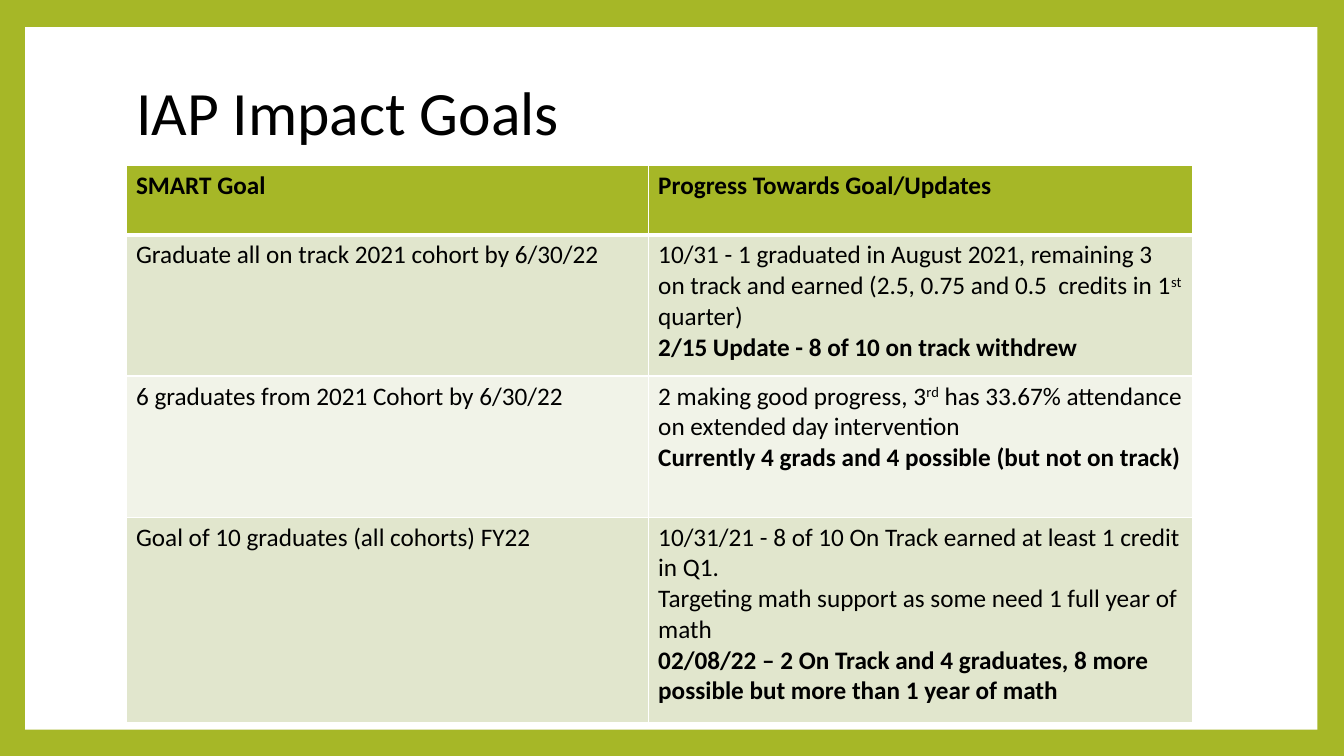
from lxml.etree import SubElement as Sub
from pptx import Presentation
from pptx.dml.color import RGBColor as Rgb
from pptx.enum.shapes import MSO_SHAPE as Kind
from pptx.enum.text import MSO_ANCHOR as Anchor, PP_ALIGN as Align
from pptx.oxml.ns import qn
from pptx.util import Pt

HUES = {"green": "A6B727", "white": "FFFFFF", "black": "000000",
        "sage": "E1E6CD", "pale": "F1F3E8"}
COLS = [373, 388.8]
ROWS = [49.7, 100.8, 100.8, 146.9]
FILLS = ["green", "sage", "pale", "sage"]
GOALS = [
    ([[("SMART Goal", "b")]], [[("Progress Towards Goal/Updates", "b")]]),
    ([[("Graduate all on track 2021 cohort by 6/30/22", "")]],
     [[("10/31 - 1 graduated in August 2021, remaining 3 on track and earned "
        "(2.5, 0.75 and 0.5  credits in 1", ""), ("st ", "s"), ("quarter)", "")],
      [("2/15 Update - 8 of 10 on track withdrew", "b")]]),
    ([[("6 graduates from 2021 Cohort by 6/30/22", "")]],
     [[("2 making good progress, 3", ""), ("rd", "s"),
       (" has 33.67% attendance on extended day intervention", "")],
      [("Currently 4 grads and 4 possible (but not on track)", "b")]]),
    ([[("Goal of 10 graduates (all cohorts) FY22", "")]],
     [[("10/31/21 - 8 of 10 On Track earned at least 1 credit in Q1.", "")],
      [("Targeting math support as some need 1 full year of math", "")],
      [("02/08/22 – 2 On Track and 4 graduates, 8 more possible "
        "but more than 1 year of math", "b")]]),
]


class Deck:
    """Holds the style and the current slide, and draws each kind of element."""

    def __init__(self, font, size):
        self.font, self.size = font, size
        self.prs = Presentation()
        self.prs.slide_width, self.prs.slide_height = Pt(960), Pt(540)
        self.slide = self.prs.slides.add_slide(self.prs.slide_layouts[5])

    def paint(self, fill, hue):
        fill.solid()
        fill.fore_color.rgb = Rgb.from_string(HUES[hue])

    def panel(self, hue, *box):
        shape = self.slide.shapes.add_shape(Kind.RECTANGLE, *map(Pt, box))
        shape.shadow.inherit = False
        self.paint(shape.fill, hue)
        shape.line.fill.background()
        self.slide.shapes._spTree.insert(2, shape._element)

    def text(self, para, words, mark="", size=None):
        run = para.add_run()
        run.text = words
        run.font.name, run.font.size = self.font, Pt(size or self.size)
        run.font.bold = mark == "b"
        run.font.color.rgb = Rgb.from_string(HUES["black"])
        if mark == "s":
            run._r.get_or_add_rPr().set("baseline", "30000")

    def title(self, words, *box):
        head = self.slide.shapes.title
        head.left, head.top, head.width, head.height = map(Pt, box)
        frame = head.text_frame
        frame.vertical_anchor, frame.word_wrap = Anchor.MIDDLE, True
        para = frame.paragraphs[0]
        para.alignment, para.line_spacing = Align.LEFT, 0.9
        self.text(para, words, size=44)

    def edge(self, cell, hue, top, base):
        props = cell._tc.get_or_add_tcPr()
        for side, width in zip("LRTB", (1, 1, top, base)):
            line = Sub(props, qn(f"a:ln{side}"), w=str(Pt(width)))
            Sub(Sub(line, qn("a:solidFill")), qn("a:srgbClr"), val=HUES[hue])

    def fill(self, cell, paras):
        frame = cell.text_frame
        for i, runs in enumerate(paras):
            para = frame.add_paragraph() if i else frame.paragraphs[0]
            for words, mark in runs:
                self.text(para, words, mark)

    def table(self, left, top, cols, rows, fills, data):
        box = map(Pt, (left, top, sum(cols), sum(rows)))
        grid = self.slide.shapes.add_table(len(rows), len(cols), *box).table
        for col, width in zip(grid.columns, cols):
            col.width = Pt(width)
        for r, (row, tall) in enumerate(zip(grid.rows, rows)):
            row.height = Pt(tall)
            for cell, paras in zip(row.cells, data[r]):
                self.edge(cell, "white", 3 if r == 1 else 1, 1 if r else 3)
                self.paint(cell.fill, fills[r])
                self.fill(cell, paras)


def main():
    deck = Deck("Calibri", 18)
    deck.paint(deck.slide.background.fill, "green")
    deck.panel("white", 18, 19.4, 923, 501.8)
    deck.title("IAP Impact Goals", 90, 29.5, 777.6, 106.6)
    deck.table(90, 118.1, COLS, ROWS, FILLS, GOALS)
    deck.prs.save("out.pptx")


if __name__ == "__main__":
    main()
